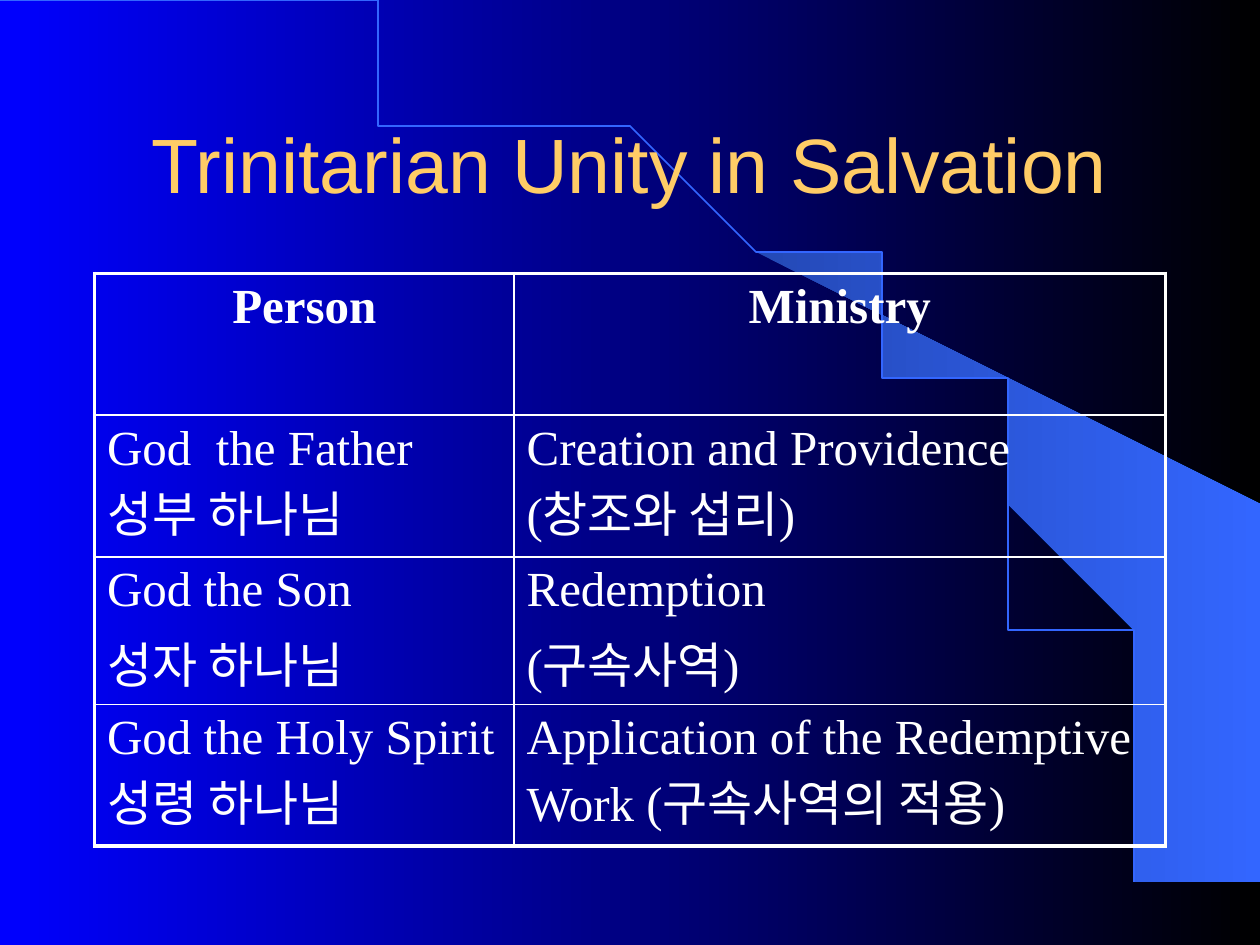
from math import cos, pi, sin

from lxml.etree import SubElement
from pptx import Presentation
from pptx.dml.color import RGBColor
from pptx.enum.text import MSO_ANCHOR, PP_ALIGN
from pptx.oxml.ns import qn
from pptx.util import Inches, Pt

COLORS = {"blue": "0000FF", "black": "000000", "deep": "2449B6",
          "azure": "3366FF", "gold": "FFCC66", "white": "FFFFFF"}
LEFT, WIDTH = 0.75, 8.5
ARC_W, ARC_H = 9.2, 7.49
BEAM = [(9.2, 7.48), (9.99, 7.49), (9.99, 4.23), (5.89, 1.73), (6.24, 1.99),
        (6.53, 2.22), (6.85, 2.5), (7.16, 2.8), (7.62, 3.3), (8.03, 3.84),
        (8.32, 4.31), (8.58, 4.79), (8.78, 5.28), (8.93, 5.72),
        (9.03, 6.09), (9.13, 6.56), (9.17, 6.96)]
ROWS = [("Person", "Ministry"),
        ("God  the Father 성부 하나님", "Creation and Providence (창조와 섭리)"),
        ("God the Son\n성자 하나님", "Redemption\n(구속사역)"),
        ("God the Holy Spirit 성령 하나님",
         "Application of the Redemptive Work (구속사역의 적용)")]
COL_WIDTHS = (3.33, 5.17)
ROW_HEIGHT = 1.125


def rgb(name):
    return RGBColor.from_string(COLORS[name])


def set_gradient(fill, start, end):
    fill.gradient()
    fill.gradient_angle = 0
    for stop, name in zip(fill.gradient_stops, (start, end)):
        stop.color.rgb = rgb(name)


def set_font(p, name, size, color, bold=False):
    p.font.name, p.font.size, p.font.bold = name, Pt(size), bold
    p.font.color.rgb = rgb(color)


def add_outline(s, points, close):
    """Add a freeform through points given in inches."""
    builder = s.shapes.build_freeform(*points[0], scale=Inches(1))
    builder.add_line_segments(points[1:], close=close)
    sp = builder.convert_to_shape()
    sp.shadow.inherit = False
    return sp


def add_decor(s):
    beam = add_outline(s, BEAM, close=True)
    set_gradient(beam.fill, "deep", "azure")
    beam.line.fill.background()

    steps = 90
    angles = [i * pi / 2 / steps for i in range(steps + 1)]
    arc = add_outline(s, [(ARC_W * sin(a), ARC_H * (1 - cos(a))) for a in angles],
                      close=False)
    arc.fill.background()
    arc.line.color.rgb = rgb("azure")
    arc.line.width = Pt(1)


def add_title(s, text):
    title = s.shapes.title
    title.left, title.top = Inches(LEFT), Inches(0.67)
    title.width, title.height = Inches(WIDTH), Inches(1.25)
    tf = title.text_frame
    tf.text = text
    tf.vertical_anchor = MSO_ANCHOR.MIDDLE
    p = tf.paragraphs[0]
    p.alignment = PP_ALIGN.CENTER
    set_font(p, "Arial", 44, "gold")
    s.shapes._spTree.append(title._element)  # in front of the decor


def set_borders(cell, outer):
    """Draw all four sides; sides flagged as outer are thicker."""
    tcPr = cell._tc.get_or_add_tcPr()
    for i, (side, is_outer) in enumerate(zip("LRTB", outer)):
        ln = SubElement(tcPr, qn(f"a:ln{side}"), w=str(Pt(2.25 if is_outer else 1)))
        fill = SubElement(ln, qn("a:solidFill"))
        SubElement(fill, qn("a:srgbClr"), val=COLORS["white"])
        tcPr.insert(i, ln)


def add_ministry_table(s):
    n_rows, n_cols = len(ROWS), len(COL_WIDTHS)
    table = s.shapes.add_table(n_rows, n_cols, Inches(LEFT), Inches(2.17),
                               Inches(WIDTH), Inches(ROW_HEIGHT * n_rows)).table
    table.first_row = table.horz_banding = False
    for column, width in zip(table.columns, COL_WIDTHS):
        column.width = Inches(width)
    for r, texts in enumerate(ROWS):
        table.rows[r].height = Inches(ROW_HEIGHT)
        for c, text in enumerate(texts):
            cell = table.cell(r, c)
            cell.fill.background()
            set_borders(cell, (c == 0, c == n_cols - 1, r == 0, r == n_rows - 1))
            cell.text = text
            for i, p in enumerate(cell.text_frame.paragraphs):
                p.alignment = PP_ALIGN.LEFT if r else PP_ALIGN.CENTER
                p.space_before = Pt(5.6 if i else 0)
                set_font(p, "Times New Roman", 28, "white", bold=r == 0)


def main():
    prs = Presentation()
    prs.slide_width, prs.slide_height = Inches(10), Inches(7.5)
    s = prs.slides.add_slide(prs.slide_layouts[5])
    set_gradient(s.background.fill, "blue", "black")
    add_decor(s)
    add_title(s, "Trinitarian Unity in Salvation")
    add_ministry_table(s)
    prs.save("out.pptx")


if __name__ == "__main__":
    main()
